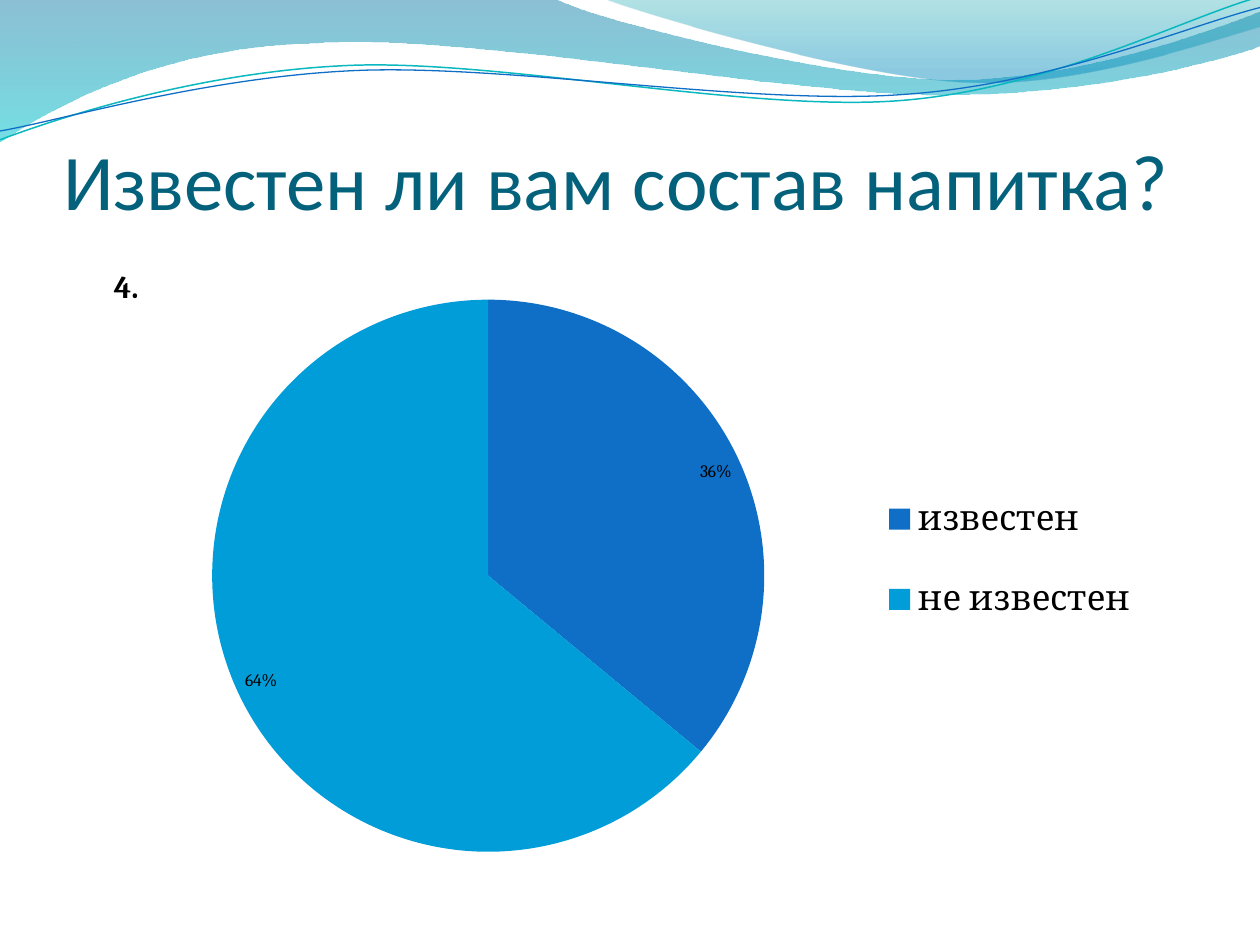
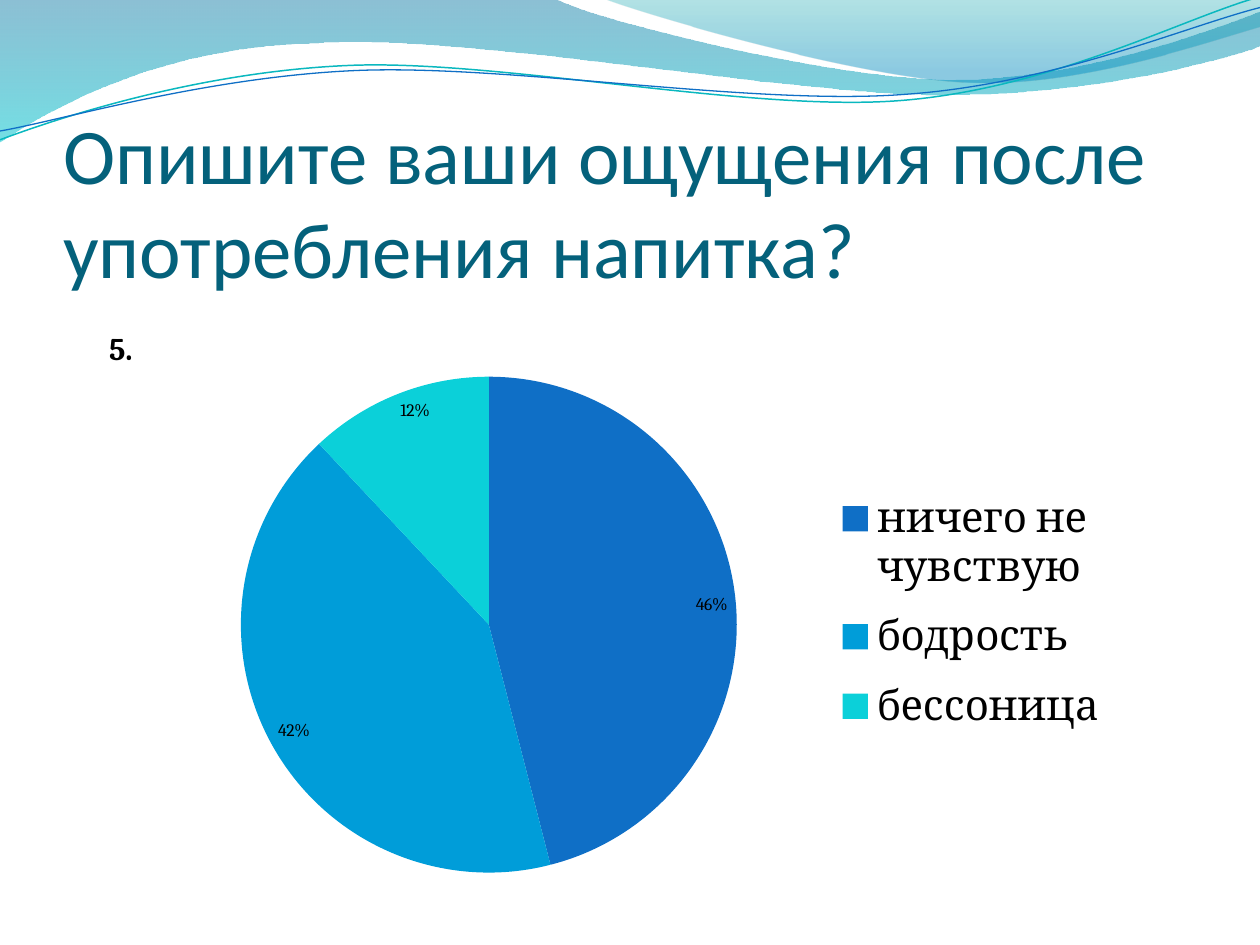
"""Build two survey slides with pie charts under a shared wave header."""
from lxml import etree
from pptx import Presentation
from pptx.chart.data import CategoryChartData
from pptx.dml.color import RGBColor
from pptx.enum.chart import XL_CHART_TYPE, XL_LABEL_POSITION, XL_LEGEND_POSITION
from pptx.enum.text import MSO_ANCHOR, MSO_AUTO_SIZE, PP_ALIGN
from pptx.oxml import parse_xml
from pptx.oxml.ns import qn
from pptx.util import Inches, Pt

PIE = XL_CHART_TYPE.PIE
INSIDE_END = XL_LABEL_POSITION.INSIDE_END
RIGHT = XL_LEGEND_POSITION.RIGHT
BOTTOM = MSO_ANCHOR.BOTTOM
NO_FIT = MSO_AUTO_SIZE.NONE
LEFT = PP_ALIGN.LEFT
CHART_NS = "http://schemas.openxmlformats.org/drawingml/2006/chart"

TITLE_COLOR = "04617B"
SLICE_COLORS = ["0F6FC6", "009DD9", "0BD0D9"]

WAVES = [
    dict(start=(0, 0), grad=[(0, "0074A1", 45), (1, "00C6CF", 55)], segments=[
        (4.4, -0.01), (4.76, 0.17, 6.64, 0.63, 7.58, 0.63),
        (8.53, 0.63, 9.58, 0.26, 10, 0.09), (10.01, 0.36),
        (9.83, 0.44, 8.7, 0.76, 7.46, 0.75), (6.22, 0.75, 3.82, 0.28, 2.57, 0.34),
        (1.29, 0.36, 0.46, 0.83, -0.01, 1.13), (0, 0)]),
    dict(start=(4.79, -0.01), grad=[(0, "00A1A9", 30), (0.8, "008BBF", 45)], segments=[
        (5.09, 0.11, 6.82, 0.62, 7.69, 0.65), (8.56, 0.69, 9.61, 0.32, 10, 0.21),
        (10, 0), (4.79, -0.01)]),
    dict(start=(0, 1.11), line=("0AB8BF", 0.85), segments=[
        (0.48, 0.93, 1.58, 0.57, 2.77, 0.52), (3.95, 0.47, 5.93, 0.89, 7.13, 0.8),
        (8.33, 0.71, 9.38, 0.15, 9.98, -0.02)]),
    dict(start=(0, 1.04), line=("0F6FC6", 0.75), segments=[
        (0.47, 0.96, 1.64, 0.61, 2.83, 0.56), (4.03, 0.51, 5.97, 0.84, 7.17, 0.75),
        (8.36, 0.67, 9.41, 0.21, 10, 0.06)]),
]

QUESTIONS = [
    dict(title="Известен ли вам состав напитка?", title_box=(0.5, 0.77, 9, 1.03),
         chart_box=(0.5, 1.64, 9, 5.28), number="4.", number_at=(0.04, 0.08),
         answers={"известен": 36, "не известен": 64}, legend_size=20,
         pie=(0.13, 0.14, 0.49, 0.83), legend=(0.69, 0.38, 0.29, 0.3)),
    dict(title="Опишите ваши ощущения после употребления напитка?",
         title_box=(0.5, 0.86, 9, 1.48),
         chart_box=(0.55, 2.27, 9, 4.8), number="5.", number_at=(0.03, 0.06),
         answers={"ничего не чувствую": 46, "бодрость": 42, "бессоница": 12},
         legend_size=24,
         pie=(0.15, 0.15, 0.44, 0.82), legend=(0.66, 0.31, 0.27, 0.46)),
]


def style(font, color="000000", **fmt):
    """Set a font's colour and any other of its properties."""
    font.color.rgb = RGBColor.from_string(color)
    for name, value in fmt.items():
        setattr(font, name, value)


def place(element, index, box, inner=False):
    """Give a chart part a manual layout in fractions of the chart."""
    for old in element.findall(qn("c:layout")):
        element.remove(old)
    layout = parse_xml(f'<c:layout xmlns:c="{CHART_NS}"><c:manualLayout/></c:layout>')
    values = [("layoutTarget", "inner")] if inner else []
    values += [("xMode", "edge"), ("yMode", "edge"), *zip("xywh", box)]
    for tag, value in values:
        etree.SubElement(layout[0], qn("c:" + tag), val=str(value))
    element.insert(index, layout)


prs = Presentation()
prs.slide_width, prs.slide_height = Inches(10), Inches(7.5)
title_only = prs.slide_layouts[5]
slides = [prs.slides.add_slide(title_only) for _ in QUESTIONS]

for position, wave in enumerate(WAVES, start=2):
    points = [seg[i:i + 2] for seg in wave["segments"] for i in range(0, len(seg), 2)]
    builder = slides[0].shapes.build_freeform(*map(Inches, wave["start"]))
    builder.add_line_segments([(Inches(x), Inches(y)) for x, y in points], close=False)
    sp = builder.convert_to_shape()
    sp.shadow.inherit = False
    lines = iter(list(sp._element.iter(qn("a:lnTo"))))
    for seg in wave["segments"]:
        line = next(lines)
        if len(seg) == 6:
            curve = etree.Element(qn("a:cubicBezTo"))
            line.addprevious(curve)
            for part in (line, next(lines), next(lines)):
                curve.append(part[0])
                part.getparent().remove(part)
    if "grad" in wave:
        sp.line.fill.background()
        sp.fill.gradient()
        sp.fill.gradient_angle = 270
        for stop, (offset, color, opacity) in zip(sp.fill.gradient_stops, wave["grad"]):
            stop.position = offset
            stop.color.rgb = RGBColor.from_string(color)
            srgb = stop._gs.find(qn("a:srgbClr"))
            etree.SubElement(srgb, qn("a:alpha"), val=str(opacity * 1000))
    else:
        color, width = wave["line"]
        sp.fill.background()
        sp.line.color.rgb = RGBColor.from_string(color)
        sp.line.width = Pt(width)
    title_only.shapes._spTree.insert(position, sp._element)

for s, question in zip(slides, QUESTIONS):
    title = s.shapes.title
    title.left, title.top, title.width, title.height = map(Inches, question["title_box"])
    tf = title.text_frame
    tf.margin_left = tf.margin_right = tf.margin_bottom = 0
    tf.margin_top = Inches(0.05)
    tf.vertical_anchor = BOTTOM
    tf.word_wrap = True
    tf.auto_size = NO_FIT
    p = tf.paragraphs[0]
    p.alignment = LEFT
    r = p.add_run()
    r.text = question["title"]
    style(r.font, TITLE_COLOR, name="Calibri", size=Pt(45))

    data = CategoryChartData()
    data.categories = list(question["answers"])
    data.add_series("Series 1", list(question["answers"].values()))
    box = map(Inches, question["chart_box"])
    chart = s.shapes.add_chart(PIE, *box, data).chart
    style(chart.font, name="Cambria", size=Pt(10))

    chart.has_title = True
    p = chart.chart_title.text_frame.paragraphs[0]
    r = p.add_run()
    r.text = question["number"]
    style(r.font, name="Cambria", size=Pt(18), bold=True)
    place(chart.chart_title._element, 1, question["number_at"])

    chart.has_legend = True
    chart.legend.position = RIGHT
    chart.legend.include_in_layout = False
    style(chart.legend.font, name="Cambria", size=Pt(question["legend_size"]))
    place(chart.legend._element, 1, question["legend"])

    plot = chart.plots[0]
    plot.vary_by_categories = True
    plot.has_data_labels = True
    labels = plot.data_labels
    labels.show_percentage, labels.show_value = True, False
    labels.number_format, labels.number_format_is_linked = "0%", False
    labels.position = INSIDE_END
    style(labels.font, name="Cambria", size=Pt(10))
    place(plot._element.getparent(), 0, question["pie"], inner=True)
    for i, color in enumerate(SLICE_COLORS[:len(question["answers"])]):
        fill = plot.series[0].points[i].format.fill
        fill.solid()
        fill.fore_color.rgb = RGBColor.from_string(color)

prs.save("out.pptx")
